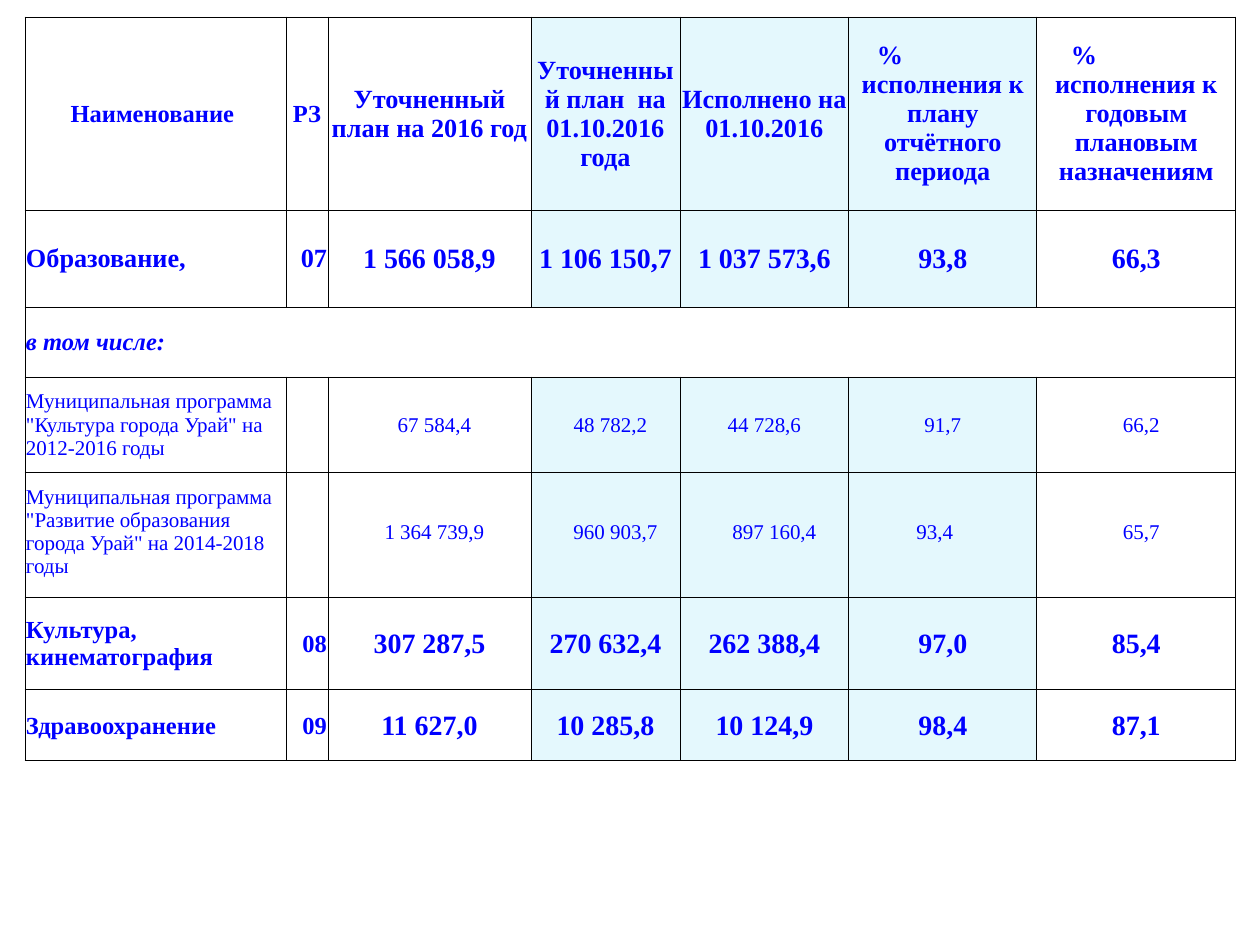
from dataclasses import dataclass

from lxml.etree import SubElement
from pptx import Presentation
from pptx.dml.color import RGBColor
from pptx.enum.text import MSO_ANCHOR, PP_ALIGN
from pptx.oxml.ns import qn
from pptx.table import _Cell
from pptx.util import Emu, Pt

PX_PER_INCH = 126
COLORS = {"text": "0000FF", "white": "FFFFFF", "tint": "E4F8FD", "border": "000000"}
FONT = "Times New Roman"
COLUMN_WIDTHS = [261, 42, 203, 149, 169, 188, 199]
TINTED_COLUMNS = (3, 4, 5)


@dataclass(frozen=True)
class Style:
    size: int
    bold: bool = True
    italic: bool = False
    align: PP_ALIGN = PP_ALIGN.CENTER


@dataclass(frozen=True)
class Entry:
    """Text of one cell; shift moves its centre right (or left, if negative) by px."""
    text: str
    style: Style
    shift: int = 0
    percent_indent: int = 0


@dataclass(frozen=True)
class Row:
    height: int
    entries: list[Entry]
    bottom_inset: int = 0


HEADING = Style(14)
HEADING_LARGE = Style(15)
SECTION = Style(15, align=PP_ALIGN.LEFT)
SECTION_SMALL = Style(14, align=PP_ALIGN.LEFT)
CODE = Style(15, align=PP_ALIGN.RIGHT)
CODE_SMALL = Style(14, align=PP_ALIGN.RIGHT)
TOTAL = Style(16)
SUBHEADING = Style(14, italic=True, align=PP_ALIGN.LEFT)
PROGRAM = Style(12, bold=False, align=PP_ALIGN.LEFT)
AMOUNT = Style(12, bold=False)


def section_row(height: int, name: str, code: str, totals: list[str],
                name_style: Style = SECTION_SMALL, code_style: Style = CODE_SMALL) -> Row:
    labels = [Entry(name, name_style), Entry(code, code_style)]
    return Row(height, labels + [Entry(total, TOTAL) for total in totals])


def program_row(height: int, name: str, amounts: list[str], shifts: list[int],
                bottom_inset: int = 0) -> Row:
    values = [Entry(amount, AMOUNT, shift) for amount, shift in zip(amounts, shifts)]
    return Row(height, [Entry(name, PROGRAM), Entry("", AMOUNT)] + values, bottom_inset)


ROWS = [
    Row(193, [
        Entry("Наименование ", HEADING),
        Entry("РЗ", HEADING),
        Entry("Уточненный план на 2016 год", HEADING_LARGE),
        Entry("Уточненный план  на 01.10.2016 года", HEADING_LARGE),
        Entry("Исполнено на 01.10.2016", HEADING_LARGE),
        Entry("исполнения к плану отчётного периода", HEADING_LARGE, percent_indent=27),
        Entry("исполнения к годовым плановым назначениям", HEADING_LARGE, percent_indent=33),
    ]),
    section_row(97, "Образование,", "07",
                ["1 566 058,9", "1 106 150,7", "1 037 573,6", "93,8", "66,3"],
                SECTION, CODE),
    Row(70, [Entry("в том числе:", SUBHEADING)]),
    program_row(95, 'Муниципальная программа "Культура города Урай" на 2012-2016 годы',
                ["67 584,4", "48 782,2", "44 728,6", "91,7", "66,2"],
                [5, 5, 0, 0, 5]),
    program_row(125, 'Муниципальная программа "Развитие образования города Урай" на 2014-2018 годы',
                ["1 364 739,9", "960 903,7", "897 160,4", "93,4", "65,7"],
                [5, 10, 10, -8, 5], bottom_inset=6),
    section_row(93, "Культура, кинематография", "08",
                ["307 287,5", "270 632,4", "262 388,4", "97,0", "85,4"]),
    section_row(71, "Здравоохранение", "09",
                ["11 627,0", "10 285,8", "10 124,9", "98,4", "87,1"]),
]


def px(length: int) -> Emu:
    return Emu(round(length * 914400 / PX_PER_INCH))


def format_cell(cell: _Cell, color: str) -> None:
    """Give the cell thin borders on all sides and a plain fill."""
    properties = cell._tc.get_or_add_tcPr()
    for side in ("a:lnL", "a:lnR", "a:lnT", "a:lnB"):
        line = SubElement(properties, qn(side), w=str(Pt(0.5)))
        fill = SubElement(line, qn("a:solidFill"))
        SubElement(fill, qn("a:srgbClr"), val=COLORS["border"])
    cell.fill.solid()
    cell.fill.fore_color.rgb = RGBColor.from_string(COLORS[color])


def add_text(paragraph, text: str, style: Style) -> None:
    paragraph.alignment = style.align
    run = paragraph.add_run()
    run.text = text
    run.font.name = FONT
    run.font.size = Pt(style.size)
    run.font.bold = style.bold
    run.font.italic = style.italic
    run.font.color.rgb = RGBColor.from_string(COLORS["text"])


def write_entry(cell: _Cell, entry: Entry, bottom_inset: int) -> None:
    cell.vertical_anchor = MSO_ANCHOR.MIDDLE
    cell.margin_left = px(1 + 2 * max(entry.shift, 0))
    cell.margin_right = px(1 + 2 * max(-entry.shift, 0))
    cell.margin_top = px(1)
    cell.margin_bottom = px(bottom_inset)
    if not entry.text:
        return
    paragraph = cell.text_frame.paragraphs[0]
    if entry.percent_indent:
        add_text(paragraph, "%", Style(entry.style.size, align=PP_ALIGN.LEFT))
        paragraph._p.get_or_add_pPr().set("marL", str(px(entry.percent_indent)))
        paragraph = cell.text_frame.add_paragraph()
    add_text(paragraph, entry.text, entry.style)


def add_budget_table(slide) -> None:
    shape = slide.shapes.add_table(
        len(ROWS), len(COLUMN_WIDTHS), px(25), px(17),
        px(sum(COLUMN_WIDTHS)), px(sum(row.height for row in ROWS)))
    table = shape.table
    table.first_row = False
    table.horz_banding = False
    for column, width in zip(table.columns, COLUMN_WIDTHS):
        column.width = px(width)
    for row_index, row in enumerate(ROWS):
        table.rows[row_index].height = px(row.height)
        spanned = len(row.entries) == 1
        for column_index in range(len(COLUMN_WIDTHS)):
            tinted = column_index in TINTED_COLUMNS and not spanned
            format_cell(table.cell(row_index, column_index), "tint" if tinted else "white")
        if spanned:
            table.cell(row_index, 0).merge(table.cell(row_index, len(COLUMN_WIDTHS) - 1))
        for column_index, entry in enumerate(row.entries):
            write_entry(table.cell(row_index, column_index), entry, row.bottom_inset)


def main() -> None:
    presentation = Presentation()
    presentation.slide_width = px(1260)
    presentation.slide_height = px(945)
    slide = presentation.slides.add_slide(presentation.slide_layouts[6])
    add_budget_table(slide)
    presentation.save("out.pptx")


if __name__ == "__main__":
    main()
